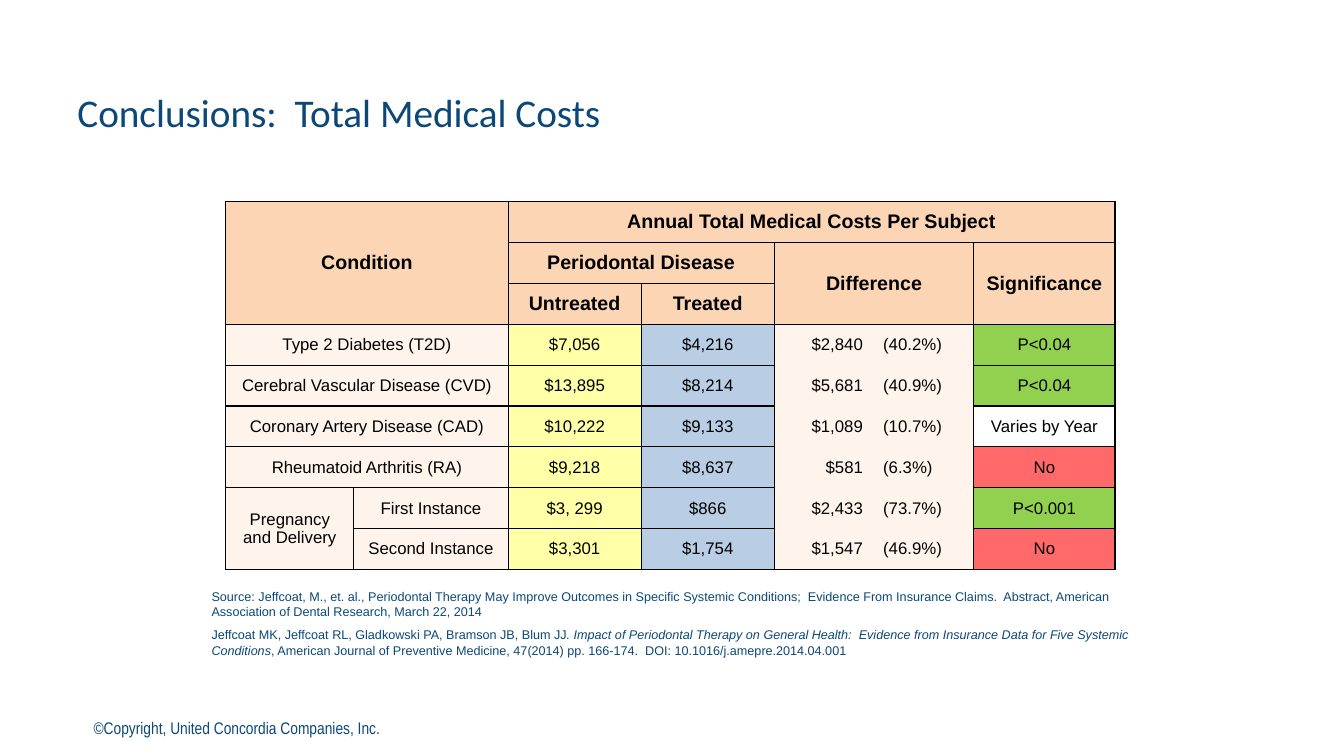
from pptx import Presentation
from pptx.dml.color import RGBColor
from pptx.enum.text import MSO_ANCHOR, PP_ALIGN
from pptx.oxml import parse_xml
from pptx.oxml.ns import nsdecls
from pptx.util import Inches, Pt

HUES = {
    "navy": "0B4878", "black": "000000", "peach": "FCD5B5", "cream": "FEF4EC",
    "yellow": "FFFFA7", "blue": "B9CDE5", "green": "92D050", "red": "FF6969",
}
LEFT, MID, RIGHT = PP_ALIGN.LEFT, PP_ALIGN.CENTER, PP_ALIGN.RIGHT
WIDTHS = [1.27, 1.53, 1.32, 1.32, 0.98, 1, 1.4]
HEADS = [
    (0, 0, 2, 1, "Condition"),
    (0, 2, 0, 6, "Annual Total Medical Costs Per Subject"),
    (1, 2, 1, 3, "Periodontal Disease"),
    (1, 4, 2, 5, "Difference"),
    (1, 6, 2, 6, "Significance"),
    (2, 2, 2, 2, "Untreated"),
    (2, 3, 2, 3, "Treated"),
]
ROWS = [
    ("Type 2 Diabetes (T2D)", "", "$7,056", "$4,216", "$2,840", "(40.2%)", "P<0.04"),
    ("Cerebral Vascular Disease (CVD)", "", "$13,895", "$8,214", "$5,681", "(40.9%)", "P<0.04"),
    ("Coronary Artery Disease (CAD)", "", "$10,222", "$9,133", "$1,089", "(10.7%)", "Varies by Year"),
    ("Rheumatoid Arthritis (RA)", "", "$9,218", "$8,637", "$581", "(6.3%)", "No"),
    ("Pregnancy and Delivery", "First Instance", "$3, 299", "$866", "$2,433", "(73.7%)", "P<0.001"),
    ("", "Second Instance", "$3,301", "$1,754", "$1,547", "(46.9%)", "No"),
]
FILLS = ["cream", "cream", "yellow", "blue", "cream", "cream"]
MARKS = {"P": "green", "N": "red", "V": None}
SOURCE = (
    "Source: Jeffcoat, M., et. al., Periodontal Therapy May Improve Outcomes in Specific "
    "Systemic Conditions;  Evidence From Insurance Claims.  Abstract, American Association "
    "of Dental Research, March 22, 2014"
)
PAPER = [
    ("Jeffcoat MK, Jeffcoat RL, Gladkowski PA, Bramson JB, Blum JJ", False),
    (". Impact of Periodontal Therapy on General Health:  Evidence from Insurance Data "
     "for Five Systemic Conditions", True),
    (", American Journal of Preventive Medicine, 47(2014) pp. 166-174.  "
     "DOI: 10.1016/j.amepre.2014.04.001", False),
]


def write(para, text, size=12, font="Arial", hue="black", bold=False, align=LEFT, before=0, line=1.0):
    """Fill a paragraph with a string or with (text, italic) pairs."""
    para.alignment, para.line_spacing = align, line
    if before:
        para.space_before = Pt(before)
    for part, slant in [(text, False)] if isinstance(text, str) else text:
        run = para.add_run()
        run.text = part
        run.font.name, run.font.size = font, Pt(size)
        run.font.bold, run.font.italic = bold, slant
        run.font.color.rgb = RGBColor.from_string(HUES[hue])


class Deck:
    """Hold the style and the current slide."""

    def __init__(self):
        self.file = Presentation()
        self.file.slide_width, self.file.slide_height = Inches(13.33), Inches(7.5)
        self.slide = self.file.slides.add_slide(self.file.slide_layouts[6])

    def text(self, x, y, w, h, *texts, anchor=MSO_ANCHOR.TOP, gap=0, **style):
        """Add a text box with one paragraph for each text."""
        frame = self.slide.shapes.add_textbox(Inches(x), Inches(y), Inches(w), Inches(h)).text_frame
        frame.word_wrap, frame.vertical_anchor = True, anchor
        for i, text in enumerate(texts):
            para = frame.add_paragraph() if i else frame.paragraphs[0]
            write(para, text, before=gap if i else 0, **style)

    def grid(self, x, y, h, rows, widths):
        """Add a plain table with the given column widths."""
        table = self.slide.shapes.add_table(
            rows, len(widths), Inches(x), Inches(y), Inches(sum(widths)), Inches(h)).table
        table.first_row = table.horz_banding = False
        for col, width in zip(table.columns, widths):
            col.width = Inches(width)
        return table

    def cell(self, cell, text, hue, sides="LRTB", **style):
        """Set the borders, fill and text of a table cell."""
        props = cell._tc.get_or_add_tcPr()
        for side in "LRTB":
            paint = "<a:noFill/>"
            if side in sides:
                paint = f'<a:solidFill><a:srgbClr val="{HUES["black"]}"/></a:solidFill>'
            props.append(parse_xml(f'<a:ln{side} {nsdecls("a")} w="12700">{paint}</a:ln{side}>'))
        if hue:
            cell.fill.solid()
            cell.fill.fore_color.rgb = RGBColor.from_string(HUES[hue])
        else:
            cell.fill.background()
        cell.vertical_anchor = MSO_ANCHOR.MIDDLE
        if text:
            write(cell.text_frame.paragraphs[0], text, **style)


def costs(deck):
    """Build the table of medical costs."""
    table = deck.grid(2.24, 2, 3.65, 3 + len(ROWS), WIDTHS)
    for top, left, low, right, text in HEADS:
        for r in range(top, low + 1):
            for c in range(left, right + 1):
                label = text if (r, c) == (top, left) else ""
                deck.cell(table.cell(r, c), label, "peach", size=14, bold=True, align=MID)
        if (top, left) != (low, right):
            table.cell(top, left).merge(table.cell(low, right))
    for r, row in enumerate(ROWS, 3):
        hues = FILLS + [MARKS[row[-1][0]]]
        ends = ("T" if r == 3 else "") + ("B" if r == len(ROWS) + 2 else "")
        for c, text in enumerate(row):
            sides = {4: "L" + ends, 5: "R" + ends}.get(c, "LRTB")
            align = {4: RIGHT, 5: LEFT}.get(c, MID)
            deck.cell(table.cell(r, c), text, hues[c], sides, align=align)
        if row[0] and not row[1]:
            table.cell(r, 0).merge(table.cell(r, 1))
    table.cell(7, 0).merge(table.cell(8, 0))


def main():
    """Build and save the slide."""
    deck = Deck()
    deck.text(0, 7.07, 4.7, 0.3, "©Copyright, United Concordia Companies, Inc.",
              font="Arial Narrow", hue="navy", align=MID)
    deck.text(0.67, 0.68, 12, 0.72, "Conclusions:  Total Medical Costs", anchor=MSO_ANCHOR.BOTTOM,
              size=28, font="Calibri", hue="navy", line=0.9)
    costs(deck)
    deck.text(2, 5.79, 9.33, 0.74, SOURCE, PAPER, gap=6, size=9, hue="navy")
    deck.file.save("out.pptx")


if __name__ == "__main__":
    main()
